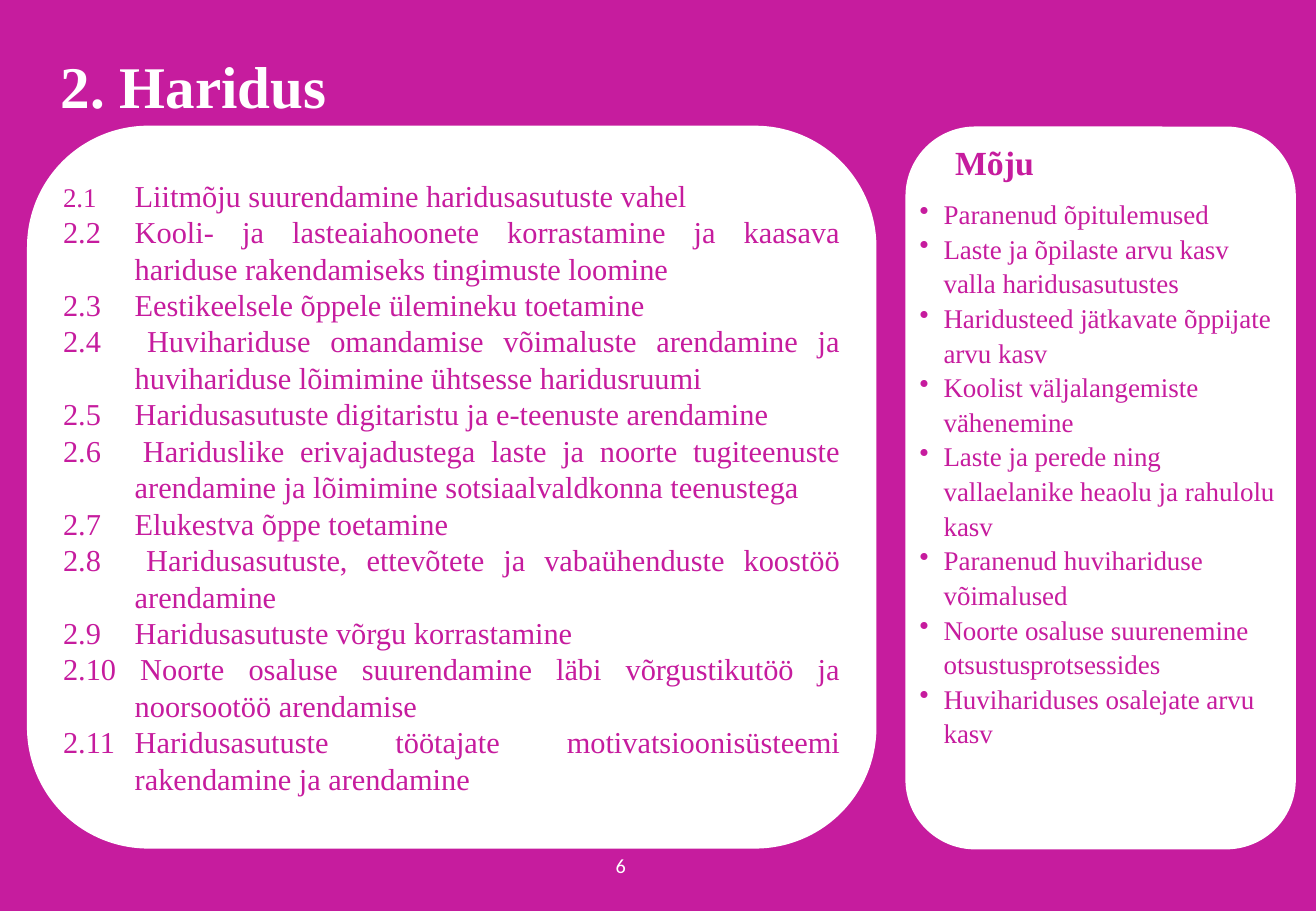
from dataclasses import dataclass

import lxml.etree
import pptx
import pptx.dml.color
import pptx.enum.shapes
import pptx.enum.text
import pptx.oxml.ns
import pptx.util

Pt = pptx.util.Pt
ALIGN = pptx.enum.text.PP_ALIGN
COLOURS = {"magenta": "C61C9E", "white": "FFFFFF"}
SERIF = "Times New Roman"

ACTIONS = [
    "2.1 \tLiitmõju suurendamine haridusasutuste vahel",
    "2.2\tKooli- ja lasteaiahoonete korrastamine ja kaasava hariduse rakendamiseks tingimuste loomine",
    "2.3 \tEestikeelsele õppele ülemineku toetamine",
    "2.4 \tHuvihariduse omandamise võimaluste arendamine ja huvihariduse lõimimine ühtsesse haridusruumi",
    "2.5\tHaridusasutuste digitaristu ja e-teenuste arendamine",
    "2.6 \tHariduslike erivajadustega laste ja noorte tugiteenuste arendamine ja lõimimine "
    "sotsiaalvaldkonna teenustega",
    "2.7 \tElukestva õppe toetamine",
    "2.8 \tHaridusasutuste, ettevõtete ja vabaühenduste koostöö arendamine",
    "2.9 \tHaridusasutuste võrgu korrastamine",
    "2.10 Noorte osaluse suurendamine läbi võrgustikutöö ja noorsootöö arendamise",
    "2.11\tHaridusasutuste töötajate motivatsioonisüsteemi rakendamine ja arendamine",
]
IMPACTS = [
    "Paranenud õpitulemused",
    "Laste ja õpilaste arvu kasv valla haridusasutustes",
    "Haridusteed jätkavate õppijate arvu kasv",
    "Koolist väljalangemiste vähenemine",
    "Laste ja perede ning vallaelanike heaolu ja rahulolu kasv",
    "Paranenud huvihariduse võimalused",
    "Noorte osaluse suurenemine otsustusprotsessides",
    "Huvihariduses osalejate arvu kasv",
]


@dataclass(frozen=True)
class Area:
    left: float
    top: float
    width: float
    height: float

    def lengths(self) -> list[int]:
        return [Pt(value) for value in (self.left, self.top, self.width, self.height)]


@dataclass(frozen=True)
class Style:
    size: float
    colour: str = "magenta"
    font: str = SERIF
    bold: bool = False
    align: ALIGN = ALIGN.LEFT
    margin: float = 0
    indent: float = 0
    bullet: str = ""
    line_spacing: float = 1.0
    space_after: float = 0


@dataclass(frozen=True)
class Line:
    text: str
    style: Style


@dataclass(frozen=True)
class Panel:
    area: Area
    rounding: float


@dataclass(frozen=True)
class TextBlock:
    area: Area
    lines: list[Line]
    wrap: bool = True


ACTION = Style(18, align=ALIGN.JUSTIFY, margin=42.5, indent=-42.5)
HEADING = Style(20, bold=True, margin=21, line_spacing=1.07, space_after=8)
IMPACT = Style(16, margin=14.2, indent=-14.2, bullet="•", line_spacing=1.07)
TITLE = Style(35, "white", bold=True, line_spacing=0.9)
PAGE_NUMBER = Style(12, "white", "Calibri", align=ALIGN.CENTER)

PANELS = [
    Panel(Area(16.5, 75, 502.5, 427.5), 0.167),
    Panel(Area(537.2, 75.5, 230.4, 427.5), 0.177),
]
TEXT_BLOCKS = [
    TextBlock(Area(33.8, 99.4, 468, 378), [Line(text, ACTION) for text in ACTIONS]),
    TextBlock(
        Area(541.5, 78.5, 225.4, 369.4),
        [Line("Mõju", HEADING)] + [Line(text, IMPACT) for text in IMPACTS],
    ),
    TextBlock(Area(32.4, 30.2, 717, 45.4), [Line("2. Haridus", TITLE)]),
    TextBlock(Area(360.7, 502.5, 14.4, 21.6), [Line("6", PAGE_NUMBER)], wrap=False),
]


def rgb(name: str) -> pptx.dml.color.RGBColor:
    return pptx.dml.color.RGBColor.from_string(COLOURS[name])


def draw_panel(page, panel: Panel) -> None:
    shape = page.shapes.add_shape(
        pptx.enum.shapes.MSO_SHAPE.ROUNDED_RECTANGLE, *panel.area.lengths()
    )
    shape.adjustments[0] = panel.rounding
    shape.shadow.inherit = False
    shape.fill.solid()
    shape.fill.fore_color.rgb = rgb("white")
    shape.line.color.rgb = rgb("white")
    shape.line.width = Pt(1)


def indent_para(para, style: Style) -> None:
    """Set the hanging indent and the bullet, which must precede the font in the XML."""
    properties = para._p.get_or_add_pPr()
    properties.set("marL", str(Pt(style.margin)))
    properties.set("indent", str(Pt(style.indent)))
    if style.bullet:
        bullet = lxml.etree.SubElement(properties, pptx.oxml.ns.qn("a:buChar"))
        bullet.set("char", style.bullet)


def style_para(para, style: Style) -> None:
    indent_para(para, style)
    para.alignment = style.align
    para.line_spacing = style.line_spacing
    para.space_after = Pt(style.space_after)
    para.font.size = Pt(style.size)
    para.font.name = style.font
    para.font.bold = style.bold
    para.font.color.rgb = rgb(style.colour)


def draw_text(page, block: TextBlock):
    box = page.shapes.add_textbox(*block.area.lengths())
    frame = box.text_frame
    frame.word_wrap = block.wrap
    frame.vertical_anchor = pptx.enum.text.MSO_ANCHOR.MIDDLE
    frame.margin_left = frame.margin_right = Pt(3.6)
    frame.margin_top = frame.margin_bottom = Pt(3.6)
    for index, line in enumerate(block.lines):
        para = frame.add_paragraph() if index else frame.paragraphs[0]
        style_para(para, line.style)
        para.add_run().text = line.text
    return box


def shrink_number(para, size: float) -> None:
    """Split the leading number into its own run of the given size."""
    span = para.runs[0]
    number, text = span.text.split("\t")
    span.text = number
    span.font.size = Pt(size)
    para.add_run().text = "\t" + text


def main() -> None:
    deck = pptx.Presentation()
    deck.slide_width, deck.slide_height = Pt(780), Pt(540)
    page = deck.slides.add_slide(deck.slide_layouts[6])
    page.background.fill.solid()
    page.background.fill.fore_color.rgb = rgb("magenta")
    for panel in PANELS:
        draw_panel(page, panel)
    boxes = [draw_text(page, block) for block in TEXT_BLOCKS]
    shrink_number(boxes[0].text_frame.paragraphs[0], 16)
    deck.save("out.pptx")


if __name__ == "__main__":
    main()
